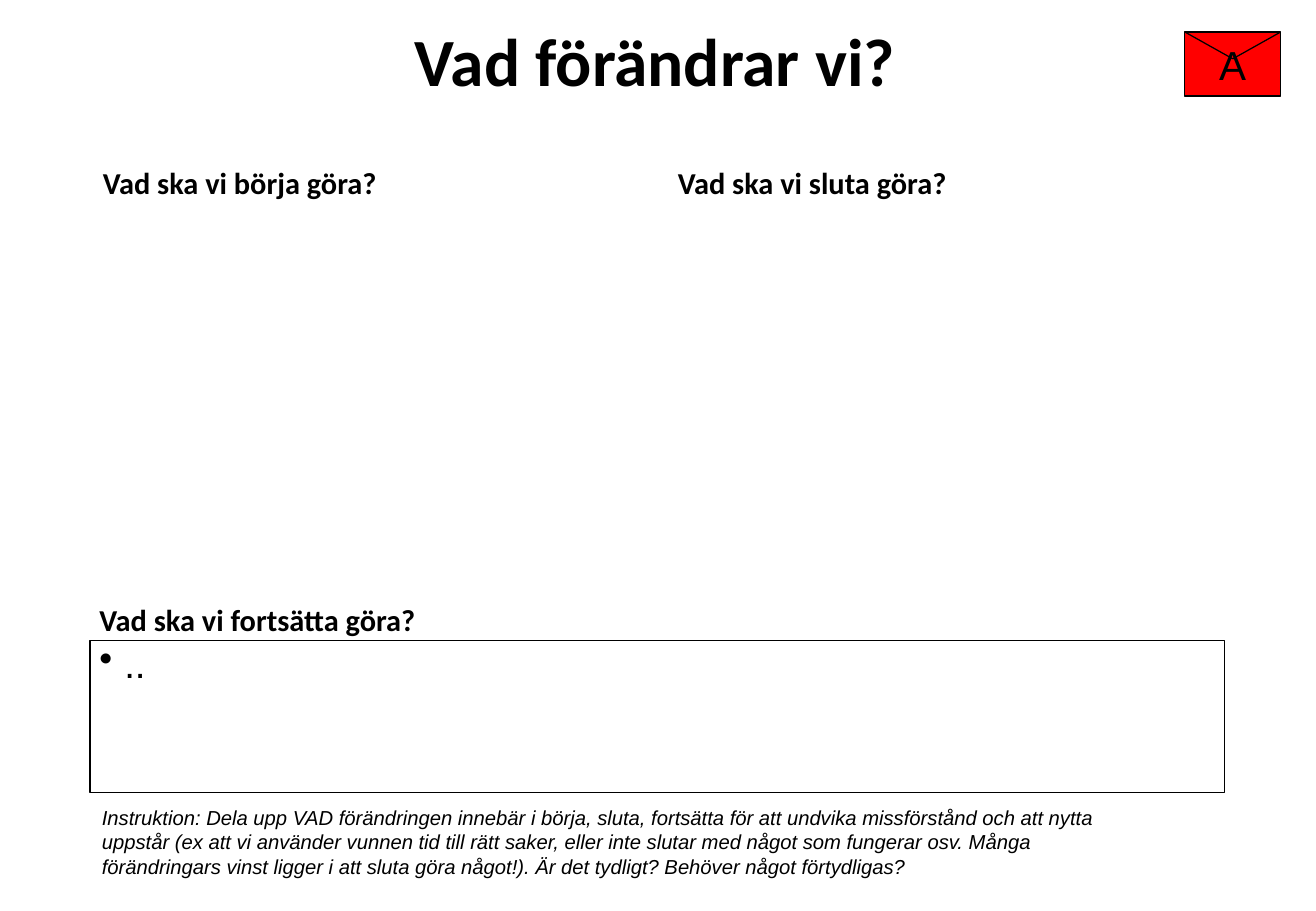
import pptx
import pptx.util
import pptx.dml.color
import pptx.enum.text
import pptx.enum.shapes
import pptx.oxml
import pptx.oxml.ns

Cm, Pt = pptx.util.Cm, pptx.util.Pt
ANCHOR = pptx.enum.text.MSO_ANCHOR
ALIGN = pptx.enum.text.PP_ALIGN

COLOURS = {"ink": "000000", "envelope": "FF0000"}
FONTS = {
    "title": {"name": "Calibri", "size": Pt(40), "bold": True},
    "heading": {"name": "Calibri", "size": Pt(18), "bold": True},
    "answer": {"name": "Arial", "size": Pt(22.8)},
    "instruction": {"name": "Arial", "size": Pt(12), "italic": True},
    "letter": {"name": "Arial", "size": Pt(24)},
}
WIDE = (0.25, 0.13)
TIGHT = (0.2, 0.1)
CENTRE = {"alignment": ALIGN.CENTER}
SNUG = {"line_spacing": 0.9}
ENVELOPE = (24.77, 0.67, 2, 1.34)
FLAP_DEPTH = 0.56

TEXTS = [
    ("Vad förändrar vi?", "title", (1.83, 0.69, 23.72, 1.32), ANCHOR.MIDDLE, WIDE, {**CENTRE, **SNUG}),
    ("Vad ska vi börja göra?", "heading", (1.9, 2.49, 11.63, 1.85), ANCHOR.BOTTOM, WIDE, SNUG),
    ("Vad ska vi sluta göra?", "heading", (13.92, 2.49, 11.71, 1.85), ANCHOR.BOTTOM, WIDE, SNUG),
    ("Vad ska vi fortsätta göra?", "heading", (1.88, 12.47, 11.71, 0.97), ANCHOR.BOTTOM, TIGHT, SNUG),
    ("Instruktion: Dela upp VAD förändringen innebär i börja, sluta, fortsätta för att "
     "undvika missförstånd och att nytta uppstår (ex att vi använder vunnen tid till rätt "
     "saker, eller inte slutar med något som fungerar osv. Många förändringars vinst ligger "
     "i att sluta göra något!). Är det tydligt? Behöver något förtydligas?",
     "instruction", (1.88, 16.71, 21.26, 1.8), ANCHOR.TOP, WIDE, {}),
]


def colour(name):
    return pptx.dml.color.RGBColor.from_string(COLOURS[name])


def set_all(target, values):
    for name, value in values.items():
        setattr(target, name, value)


def draw_line(shape):
    shape.line.color.rgb = colour("ink")
    shape.line.width = Pt(0.75)


def write(box, text, style, anchor, insets, layout, bullet=False):
    side, edge = map(Cm, insets)
    set_all(box.text_frame, {
        "word_wrap": True, "vertical_anchor": anchor,
        "margin_left": side, "margin_right": side,
        "margin_top": edge, "margin_bottom": edge,
    })
    para = box.text_frame.paragraphs[0]
    set_all(para, {"alignment": ALIGN.LEFT, **layout})
    if bullet:
        properties = para._p.get_or_add_pPr()
        properties.set("marL", str(Cm(0.52)))
        properties.set("indent", str(-Cm(0.52)))
        mark = pptx.oxml.parse_xml(
            f'<a:buChar {pptx.oxml.ns.nsdecls("a")} char="•"/>')
        properties.append(mark)
    span = para.add_run()
    span.text = text
    set_all(span.font, FONTS[style])
    span.font.color.rgb = colour("ink")


def add_rectangle(shapes, place, fill=None):
    box = shapes.add_shape(pptx.enum.shapes.MSO_SHAPE.RECTANGLE, *map(Cm, place))
    box.shadow.inherit = False
    if fill:
        box.fill.solid()
        box.fill.fore_color.rgb = colour(fill)
    else:
        box.fill.background()
    draw_line(box)
    return box


def add_envelope(page):
    group = page.shapes.add_group_shape()
    left, top, width, height = ENVELOPE
    letter = add_rectangle(group.shapes, ENVELOPE, "envelope")
    write(letter, "A", "letter", ANCHOR.MIDDLE, WIDE, CENTRE)
    for corner in (left, left + width):
        flap = group.shapes.add_connector(
            pptx.enum.shapes.MSO_CONNECTOR.STRAIGHT,
            Cm(corner), Cm(top), Cm(left + width / 2), Cm(top + FLAP_DEPTH))
        draw_line(flap)
        flap._element.spPr.append(pptx.oxml.parse_xml(
            f'<a:effectLst {pptx.oxml.ns.nsdecls("a")}/>'))


def main():
    deck = pptx.Presentation()
    set_all(deck, {"slide_width": Cm(27.51), "slide_height": Cm(19.05)})
    page = deck.slides.add_slide(deck.slide_layouts[6])
    for text, style, place, anchor, insets, layout in TEXTS:
        box = page.shapes.add_textbox(*map(Cm, place))
        write(box, text, style, anchor, insets, layout)
    answer = add_rectangle(page.shapes, (1.88, 13.39, 23.72, 3.18))
    write(answer, "..", "answer", ANCHOR.TOP, TIGHT, SNUG, bullet=True)
    add_envelope(page)
    deck.save("out.pptx")


if __name__ == "__main__":
    main()
